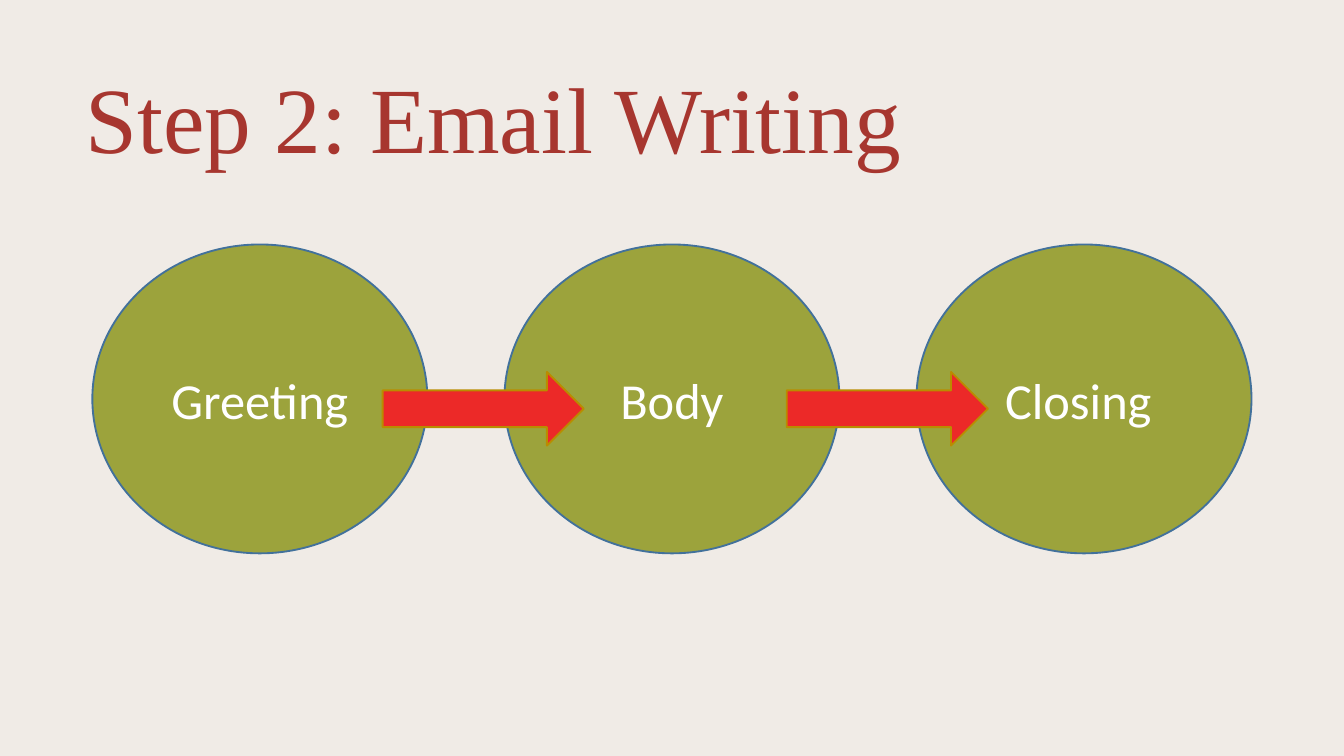
from pptx import Presentation
from pptx import util as u
from pptx.dml.color import RGBColor
from pptx.enum import shapes, text

Pt = u.Pt
COLORS = {
    "background": "F0EBE6",
    "title": "A7362F",
    "circle": "9CA33C",
    "circle_line": "42719B",
    "arrow": "EC2928",
    "arrow_line": "BA8C00",
    "label": "FFFFFF",
}


def add_filled(page, kind, left, top, width, height, name):
    shape = page.shapes.add_shape(kind, Pt(left), Pt(top), Pt(width), Pt(height))
    shape.shadow.inherit = False
    shape.fill.solid()
    shape.fill.fore_color.rgb = RGBColor.from_string(COLORS[name])
    shape.line.color.rgb = RGBColor.from_string(COLORS[name + "_line"])
    shape.line.width = Pt(1)
    return shape


def write(shape, words, font, size, color, align):
    frame = shape.text_frame
    frame.text = words
    frame.word_wrap = True
    frame.auto_size = text.MSO_AUTO_SIZE.NONE
    frame.vertical_anchor = text.MSO_ANCHOR.MIDDLE
    frame.margin_left = frame.margin_right = Pt(5.3)
    frame.margin_top = frame.margin_bottom = Pt(2.7)
    para = frame.paragraphs[0]
    para.alignment = align
    span = para.runs[0]
    span.font.name = font
    span.font.size = Pt(size)
    span.font.color.rgb = RGBColor.from_string(COLORS[color])
    return para


# Deck and background
deck = Presentation()
deck.slide_width, deck.slide_height = Pt(720), Pt(405)
page = deck.slides.add_slide(deck.slide_layouts[5])
page.background.fill.solid()
page.background.fill.fore_color.rgb = RGBColor.from_string(COLORS["background"])

# Title
title = page.shapes.title
title.left, title.top, title.width, title.height = Pt(40.5), Pt(36.5), Pt(666.5), Pt(59)
heading = write(title, "Step 2: Email Writing", "Times New Roman", 50, "title",
                text.PP_ALIGN.LEFT)
heading.line_spacing = 0.9

# Circles for the parts of an email
for i, part in enumerate(["Greeting", "Body", "Closing "]):
    circle = add_filled(page, shapes.MSO_SHAPE.OVAL,
                        49.5 + i * 220.75, 131, 179.5, 165.5, "circle")
    write(circle, part, "Calibri", 27, "label", text.PP_ALIGN.CENTER)

# Arrows between the circles
for i in range(2):
    add_filled(page, shapes.MSO_SHAPE.RIGHT_ARROW,
               205 + i * 216.5, 199.25, 107.75, 39.5, "arrow")

deck.save("out.pptx")
